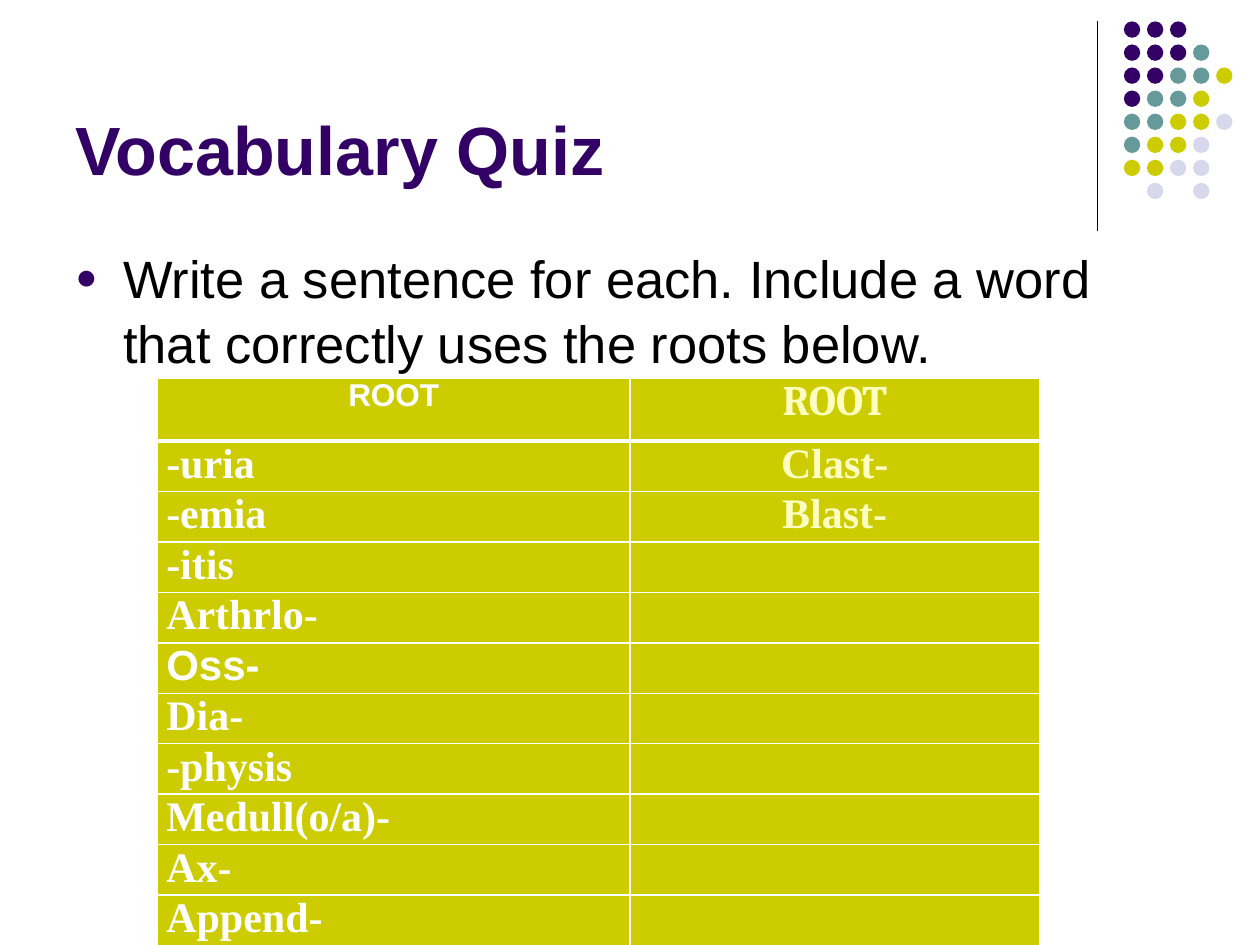
from dataclasses import dataclass

from lxml import etree
from pptx import Presentation
from pptx.dml.color import RGBColor
from pptx.enum.shapes import MSO_CONNECTOR, MSO_SHAPE
from pptx.enum.text import MSO_ANCHOR, PP_ALIGN
from pptx.oxml.ns import qn
from pptx.util import Inches, Pt

LEFT, CENTER = PP_ALIGN.LEFT, PP_ALIGN.CENTER
TOP, BOTTOM = MSO_ANCHOR.TOP, MSO_ANCHOR.BOTTOM
OVAL, STRAIGHT = MSO_SHAPE.OVAL, MSO_CONNECTOR.STRAIGHT


@dataclass(frozen=True)
class Theme:
    purple: str = "330066"
    teal: str = "669999"
    olive: str = "CCCC00"
    lilac: str = "D8D8EC"
    cream: str = "FFFFC2"
    white: str = "FFFFFF"
    black: str = "000000"
    title: int = 39
    body: int = 30
    root: int = 24
    header: int = 18


THEME = Theme()


@dataclass(frozen=True)
class Style:
    size: int
    color: str
    name: str = "Arial"
    bold: bool = False
    align: PP_ALIGN = LEFT


@dataclass(frozen=True)
class Entry:
    text: str
    style: Style


# Each letter is one dot: the grid reads as the ornament looks.
DOT_ROWS = ("PPP", "PPPT", "PPTTO", "PTTO", "TTOOL", "TOOL", "OOLL", " L L")
DOT_COLORS = {"P": THEME.purple, "T": THEME.teal,
              "O": THEME.olive, "L": THEME.lilac}
DOT_LEFT, DOT_TOP, DOT_PITCH, DOT_SIZE = 8.92, 0.17, 0.183, 0.13

TITLE = Style(THEME.title, THEME.purple, bold=True)
BODY = Style(THEME.body, THEME.black)
HEAD_LEFT = Style(THEME.header, THEME.white, bold=True, align=CENTER)
HEAD_RIGHT = Style(THEME.root, THEME.cream, "Cambria", True, CENTER)
ROOT = Style(THEME.root, THEME.white, "Times New Roman", True)
ROOT_ARIAL = Style(THEME.root, THEME.white, bold=True)
ROOT_RIGHT = Style(THEME.root, THEME.cream, "Times New Roman", True, CENTER)

LEFT_ROOTS = ("-uria", "-emia", "-itis", "Arthrlo-", "Oss-", "Dia-",
              "-physis", "Medull(o/a)-", "Ax-", "Append-")
LEFT_COLUMN = [Entry("ROOT", HEAD_LEFT)] + [
    Entry(t, ROOT_ARIAL if t == "Oss-" else ROOT) for t in LEFT_ROOTS]
RIGHT_COLUMN = [Entry("ROOT", HEAD_RIGHT)] + [
    Entry(t, ROOT_RIGHT) for t in ("Clast-", "Blast-")]
COLUMN_WIDTHS = (3.75, 3.25)
HEADER_HEIGHT, ROW_HEIGHT = 0.5, 0.37
THIN, THICK = 1, 3


def rgb(color: str) -> RGBColor:
    return RGBColor.from_string(color)


def write(p, text: str, style: Style) -> None:
    p.alignment = style.align
    r = p.add_run()
    r.text = text
    for key in ("name", "bold"):
        setattr(r.font, key, getattr(style, key))
    r.font.size = Pt(style.size)
    r.font.color.rgb = rgb(style.color)


def add_text(slide, box: tuple, text: str, style: Style, anchor=TOP):
    tf = slide.shapes.add_textbox(*map(Inches, box)).text_frame
    tf.word_wrap = True
    tf.vertical_anchor = anchor
    write(tf.paragraphs[0], text, style)
    return tf.paragraphs[0]


def add_bullet(p, color: str) -> None:
    pPr = p._p.get_or_add_pPr()
    pPr.set("marL", str(Inches(0.38)))
    pPr.set("indent", str(-Inches(0.38)))
    clr = etree.SubElement(pPr, qn("a:buClr"))
    etree.SubElement(clr, qn("a:srgbClr"), val=color)
    etree.SubElement(pPr, qn("a:buSzPct"), val="70000")
    etree.SubElement(pPr, qn("a:buFont"), typeface="Arial")
    etree.SubElement(pPr, qn("a:buChar"), char="●")


def add_rule(slide) -> None:
    s = slide.shapes.add_connector(
        STRAIGHT, *map(Inches, (8.71, 0.17, 8.71, 1.83)))
    s.line.color.rgb = rgb(THEME.black)
    s.line.width = Pt(0.75)
    etree.SubElement(s._element.spPr, qn("a:effectLst"))


def add_dots(slide) -> None:
    for row, line in enumerate(DOT_ROWS):
        for col, key in enumerate(line):
            if key not in DOT_COLORS:
                continue
            box = (DOT_LEFT + col * DOT_PITCH, DOT_TOP + row * DOT_PITCH,
                   DOT_SIZE, DOT_SIZE)
            s = slide.shapes.add_shape(OVAL, *map(Inches, box))
            s.shadow.inherit = False
            s.fill.solid()
            s.fill.fore_color.rgb = rgb(DOT_COLORS[key])
            s.line.fill.background()


def format_cell(cell, row: int) -> None:
    margins = {"margin_left": 0.07, "margin_right": 0.07,
               "margin_top": 0, "margin_bottom": 0}
    for key, value in margins.items():
        setattr(cell, key, Inches(value))
    widths = {"L": THIN, "R": THIN, "T": THICK if row == 1 else THIN,
              "B": THICK if row == 0 else THIN}
    tcPr = cell._tc.get_or_add_tcPr()
    for side, width in widths.items():
        ln = etree.SubElement(tcPr, qn(f"a:ln{side}"), w=str(Pt(width)))
        fill = etree.SubElement(ln, qn("a:solidFill"))
        etree.SubElement(fill, qn("a:srgbClr"), val=THEME.white)
    cell.fill.solid()
    cell.fill.fore_color.rgb = rgb(THEME.olive)


def add_roots_table(slide) -> None:
    count = len(LEFT_COLUMN)
    height = HEADER_HEIGHT + (count - 1) * ROW_HEIGHT
    box = (1.25, 3, sum(COLUMN_WIDTHS), height)
    table = slide.shapes.add_table(
        count, len(COLUMN_WIDTHS), *map(Inches, box)).table
    for col, width in enumerate(COLUMN_WIDTHS):
        table.columns[col].width = Inches(width)
    for row in range(count):
        table.rows[row].height = Inches(ROW_HEIGHT if row else HEADER_HEIGHT)
        for col, entries in enumerate((LEFT_COLUMN, RIGHT_COLUMN)):
            cell = table.cell(row, col)
            format_cell(cell, row)
            if row < len(entries):
                entry = entries[row]
                write(cell.text_frame.paragraphs[0], entry.text, entry.style)


def main() -> None:
    prs = Presentation()
    prs.slide_width, prs.slide_height = Inches(10), Inches(7.5)
    slide = prs.slides.add_slide(prs.slide_layouts[6])
    add_rule(slide)
    add_dots(slide)
    add_text(slide, (0.5, 0.13, 8.25, 1.42), "Vocabulary Quiz", TITLE, BOTTOM)
    p = add_text(slide, (0.5, 1.88, 9, 4.82),
                 "Write a sentence for each. Include a word that correctly "
                 "uses the roots below.", BODY)
    p.line_spacing = 1.04
    add_bullet(p, THEME.purple)
    add_roots_table(slide)
    prs.save("out.pptx")


if __name__ == "__main__":
    main()
